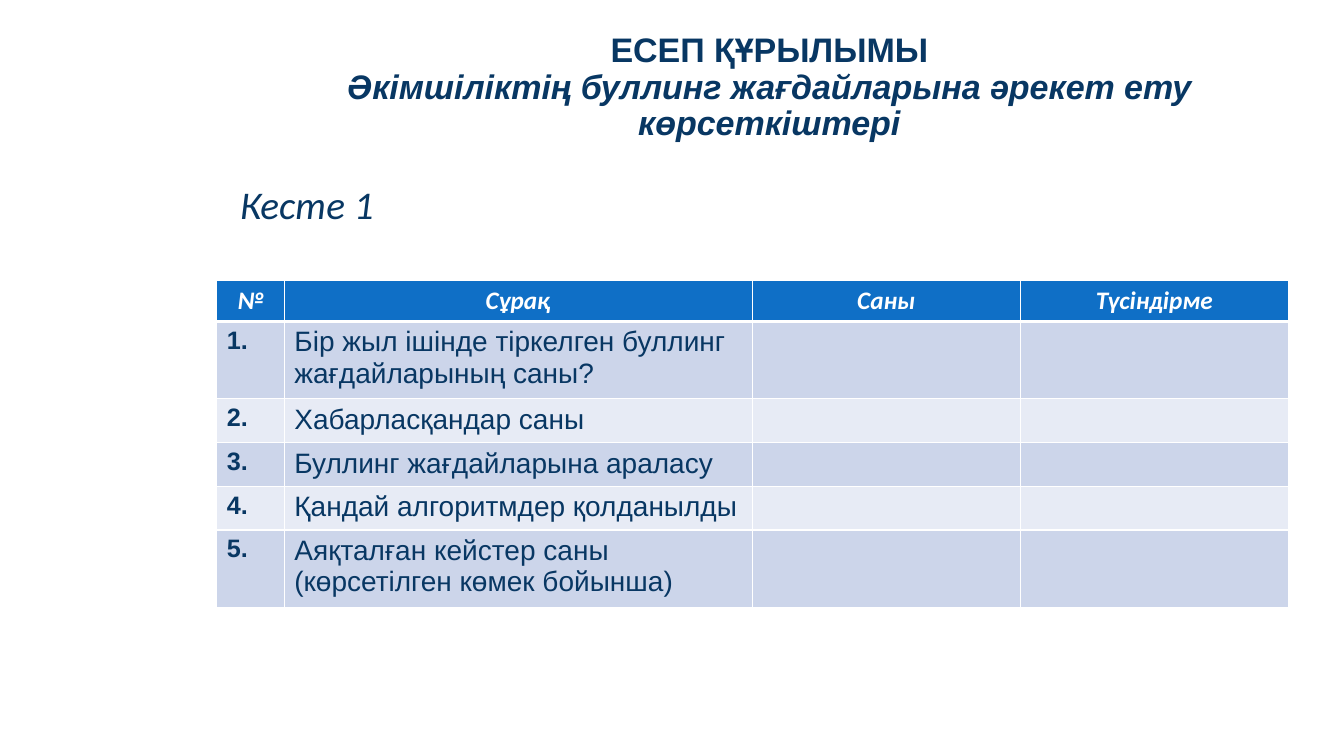
"""Build the slide with the bullying response report table."""
from lxml.etree import SubElement
from pptx import Presentation
from pptx.dml.color import RGBColor
from pptx.enum.text import MSO_ANCHOR, PP_ALIGN
from pptx.oxml.ns import qn
from pptx.util import Inches, Pt

COLORS = {"navy": "083763", "blue": "0F6FC6", "white": "FFFFFF",
          "band_dark": "CCD5EA", "band_light": "E7EBF5"}
HEADERS = ["№", "Сұрақ", "Саны", "Түсіндірме"]
QUESTIONS = [
    "Бір жыл ішінде тіркелген буллинг жағдайларының саны?",
    "Хабарласқандар саны",
    "Буллинг жағдайларына араласу",
    "Қандай алгоритмдер қолданылды",
    "Аяқталған кейстер саны (көрсетілген көмек бойынша)",
]
COL_WIDTHS = [0.67, 4.64, 2.66, 2.66]
ROW_HEIGHTS = [0.41, 0.72, 0.41, 0.41, 0.41, 0.72]


def add_run(p, text, size, font, color, bold=False, italic=False):
    r = p.add_run()
    r.text = text
    r.font.size = Pt(size)
    r.font.name = font
    r.font.bold = bold
    r.font.italic = italic
    r.font.color.rgb = RGBColor.from_string(COLORS[color])


def style_cell(cell, fill, bottom):
    tc_pr = cell._tc.get_or_add_tcPr()
    for side, width in (("L", 1), ("R", 1), ("T", 1), ("B", bottom)):
        ln = SubElement(tc_pr, qn(f"a:ln{side}"), w=str(Pt(width)))
        SubElement(SubElement(ln, qn("a:solidFill")), qn("a:srgbClr"), val=COLORS["white"])
    cell.fill.solid()
    cell.fill.fore_color.rgb = RGBColor.from_string(COLORS[fill])


prs = Presentation()
prs.slide_width, prs.slide_height = Inches(13.33), Inches(7.5)
s = prs.slides.add_slide(prs.slide_layouts[6])

title = s.shapes.add_textbox(Inches(2.49), Inches(0.15), Inches(10.28), Inches(1.45))
tf = title.text_frame
tf.word_wrap = True
tf.vertical_anchor = MSO_ANCHOR.MIDDLE
p = tf.paragraphs[0]
add_run(p, "ЕСЕП ҚҰРЫЛЫМЫ", 24.3, "Arial", "navy", bold=True)
p = tf.add_paragraph()
add_run(p, "Әкімшіліктің буллинг жағдайларына әрекет ету көрсеткіштері",
        24.3, "Arial", "navy", bold=True, italic=True)
for p in tf.paragraphs:
    p.alignment = PP_ALIGN.CENTER
    p.line_spacing = 0.9

caption = s.shapes.add_textbox(Inches(2.28), Inches(1.79), Inches(10.5), Inches(0.6))
tf = caption.text_frame
tf.word_wrap = True
p = tf.paragraphs[0]
p.line_spacing = 0.9
add_run(p, "Кесте 1", 28, "Calibri", "navy", italic=True)

frame = s.shapes.add_table(len(ROW_HEIGHTS), len(COL_WIDTHS), Inches(2.15), Inches(2.78),
                           Inches(sum(COL_WIDTHS)), Inches(sum(ROW_HEIGHTS)))
table = frame.table
for col, width in zip(table.columns, COL_WIDTHS):
    col.width = Inches(width)
for row, height in zip(table.rows, ROW_HEIGHTS):
    row.height = Inches(height)

for cell, header in zip(table.rows[0].cells, HEADERS):
    style_cell(cell, "blue", 3)
    p = cell.text_frame.paragraphs[0]
    p.alignment = PP_ALIGN.CENTER
    add_run(p, header, 18, "Calibri", "white", bold=True, italic=True)

for i, question in enumerate(QUESTIONS, 1):
    cells = list(table.rows[i].cells)
    for cell in cells:
        style_cell(cell, "band_dark" if i % 2 else "band_light", 1)
    add_run(cells[0].text_frame.paragraphs[0], f"{i}.", 18, "Arial", "navy", bold=True)
    add_run(cells[1].text_frame.paragraphs[0], question, 20, "Arial", "navy")

prs.save("out.pptx")
